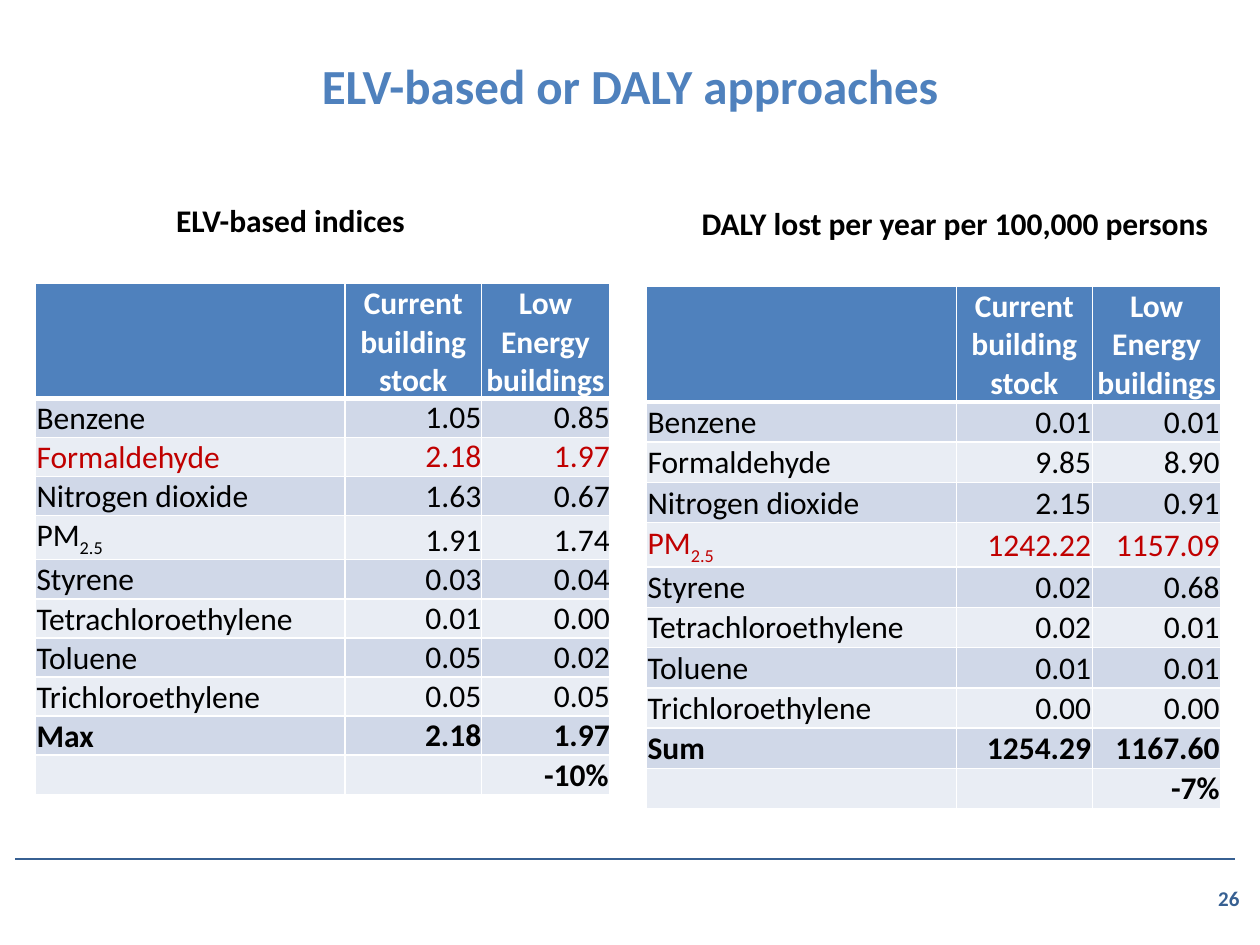
import pptx
import pptx.util
import pptx.dml.color
import pptx.enum.shapes
import pptx.enum.text
import pptx.oxml.ns
from lxml import etree

Inches, Pt = pptx.util.Inches, pptx.util.Pt
ALIGN = pptx.enum.text.PP_ALIGN
ANCHOR = pptx.enum.text.MSO_ANCHOR
AUTO = pptx.enum.text.MSO_AUTO_SIZE
qn = pptx.oxml.ns.qn

COLORS = {"blue": "4F81BD", "navy": "376092", "white": "FFFFFF", "black": "000000",
          "red": "C00000", "dark_band": "D0D8E8", "light_band": "E9EDF4"}
TITLE = "ELV-based or DALY approaches"
PAGE = "26"
HEADER = ("", "Current building stock", "Low Energy buildings")
POLLUTANTS = ("Benzene", "Formaldehyde", "Nitrogen dioxide", "PM_2.5", "Styrene",
              "Tetrachloroethylene", "Toluene", "Trichloroethylene")
COL_WIDTHS = (2.46, 1.08, 1.02)
SUBSCRIPT_ROW = 4
TOTAL_ROW = 9
PANELS = [
    {"caption": "ELV-based indices", "caption_at": (1.3, 1.55, 2.04, 0.4),
     "at": (0.28, 2.25), "header_h": 0.9, "row_h": 0.31, "red_row": 2,
     "number_anchor": ANCHOR.BOTTOM, "number_inset": 0,
     "stock": ("1.05", "2.18", "1.63", "1.91", "0.03", "0.01", "0.05", "0.05"),
     "low_energy": ("0.85", "1.97", "0.67", "1.74", "0.04", "0.00", "0.02", "0.05"),
     "total": ("Max", "2.18", "1.97"), "change": "-10%"},
    {"caption": "DALY lost per year per 100,000 persons", "caption_at": (5.47, 1.57, 4.26, 0.4),
     "at": (5.13, 2.27), "header_h": 0.92, "row_h": 0.32, "red_row": 4,
     "number_anchor": ANCHOR.MIDDLE, "number_inset": 0.01,
     "stock": ("0.01", "9.85", "2.15", "1242.22", "0.02", "0.02", "0.01", "0.00"),
     "low_energy": ("0.01", "8.90", "0.91", "1157.09", "0.68", "0.01", "0.01", "0.00"),
     "total": ("Sum", "1254.29", "1167.60"), "change": "-7%"},
]


def rgb(name):
    return pptx.dml.color.RGBColor.from_string(COLORS[name])


def put_text(tf, text, size=18, color="black", bold=False, align=ALIGN.LEFT):
    p = tf.paragraphs[0]
    p.alignment = align
    for i, part in enumerate(text.split("_")):
        r = p.add_run()
        r.text = part
        r.font.name = "Calibri"
        r.font.size = Pt(size)
        r.font.bold = bold
        r.font.color.rgb = rgb(color)
        if i:
            r.font._element.set("baseline", "-25000")


def add_label(s, text, at, anchor=ANCHOR.TOP, wrap=False, **fmt):
    tf = s.shapes.add_textbox(*map(Inches, at)).text_frame
    tf.word_wrap = wrap
    tf.auto_size = AUTO.NONE if wrap else AUTO.SHAPE_TO_FIT_TEXT
    tf.vertical_anchor = anchor
    put_text(tf, text, **fmt)


def set_borders(cell, bottom):
    tcPr = cell._tc.get_or_add_tcPr()
    for side, width in (("L", 1), ("R", 1), ("T", 1), ("B", bottom)):
        ln = etree.SubElement(tcPr, qn(f"a:ln{side}"), w=str(Pt(width)))
        fill = etree.SubElement(ln, qn("a:solidFill"))
        etree.SubElement(fill, qn("a:srgbClr"), val=COLORS["white"])


def format_cell(cell, text, fill, anchor, inset, bottom=1, **fmt):
    set_borders(cell, bottom)
    cell.fill.solid()
    cell.fill.fore_color.rgb = rgb(fill)
    cell.vertical_anchor = anchor
    cell.margin_left = cell.margin_right = cell.margin_top = Inches(inset)
    cell.margin_bottom = 0
    if text:
        put_text(cell.text_frame, text, **fmt)


def add_panel(s, panel):
    add_label(s, panel["caption"], panel["caption_at"], bold=True)
    rows = [HEADER, *zip(POLLUTANTS, panel["stock"], panel["low_energy"]),
            panel["total"], ("", "", panel["change"])]
    heights = [panel["header_h"]] + [panel["row_h"]] * (len(rows) - 1)
    heights[SUBSCRIPT_ROW] = 0.35
    frame = s.shapes.add_table(len(rows), len(HEADER), *map(Inches, panel["at"]),
                               Inches(sum(COL_WIDTHS)), Inches(sum(heights)))
    table = frame.table
    for col, width in zip(table.columns, COL_WIDTHS):
        col.width = Inches(width)
    for i, row in enumerate(rows):
        table.rows[i].height = Inches(heights[i])
        for j, text in enumerate(row):
            cell = table.cell(i, j)
            if i == 0:
                format_cell(cell, text, "blue", ANCHOR.BOTTOM, 0.01, bottom=3,
                            color="white", bold=True, align=ALIGN.CENTER)
                continue
            is_number = j > 0 and i <= TOTAL_ROW
            format_cell(cell, text, "dark_band" if i % 2 else "light_band",
                        panel["number_anchor"] if is_number else ANCHOR.MIDDLE,
                        panel["number_inset"] if is_number else 0.01,
                        color="red" if i == panel["red_row"] else "black",
                        bold=i >= TOTAL_ROW, align=ALIGN.RIGHT if j else ALIGN.LEFT)


def main():
    prs = pptx.Presentation()
    prs.slide_width, prs.slide_height = Inches(10), Inches(7.5)
    s = prs.slides.add_slide(prs.slide_layouts[5])
    title = s.shapes.title
    title.left, title.top, title.width, title.height = map(Inches, (0.5, 0.05, 9, 1.25))
    title.text_frame.vertical_anchor = ANCHOR.MIDDLE
    put_text(title.text_frame, TITLE, size=28, color="blue", bold=True, align=ALIGN.CENTER)

    add_label(s, PAGE, (9.57, 6.93, 0.43, 0.4), anchor=ANCHOR.MIDDLE, wrap=True,
              size=12, color="navy", bold=True)
    rule = s.shapes.add_connector(pptx.enum.shapes.MSO_CONNECTOR.STRAIGHT,
                                  *map(Inches, (0.12, 6.82, 9.8, 6.82)))
    rule.line.color.rgb = rgb("navy")
    rule.line.width = Pt(1)
    etree.SubElement(rule._element.spPr, qn("a:effectLst"))

    for panel in PANELS:
        add_panel(s, panel)
    prs.save("out.pptx")


if __name__ == "__main__":
    main()
